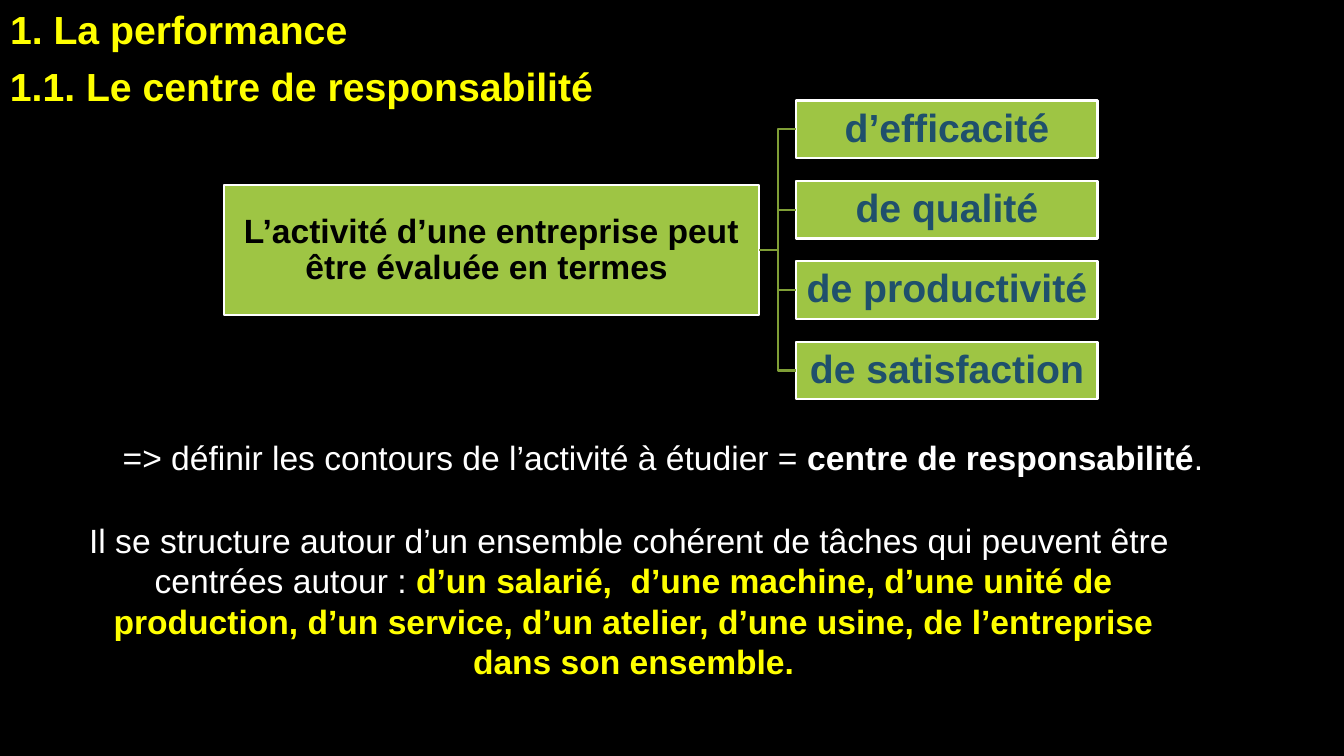
"""Build the slide on performance and the responsibility centre."""
from lxml import etree
from pptx import Presentation
from pptx.dml.color import RGBColor
from pptx.enum import shapes, text
from pptx.oxml import ns
from pptx.util import Pt

COLORS = {
    "background": "000000",
    "heading": "FFFF00",
    "body": "FFFFFF",
    "box": "9EC544",
    "border": "FFFFFF",
    "link": "7F9E36",
    "root": "000000",
    "criterion": "1F506C",
}


def color(name):
    return RGBColor.from_string(COLORS[name])


def write(shape, spans, size=24, align=text.PP_ALIGN.LEFT, anchor=text.MSO_ANCHOR.TOP,
          before=0, after=0, spacing=1.0, inset=None, wrap=True):
    """Fill a shape with one paragraph of (text, colour, bold) spans."""
    frame = shape.text_frame
    frame.auto_size = text.MSO_AUTO_SIZE.NONE
    frame.word_wrap = wrap
    frame.vertical_anchor = anchor
    if inset is not None:
        frame.margin_left = frame.margin_right = Pt(inset)
        frame.margin_top = frame.margin_bottom = Pt(inset)
    para = frame.paragraphs[0]
    para.alignment = align
    para.space_before, para.space_after = Pt(before), Pt(after)
    para.line_spacing = spacing
    for words, name, bold in spans:
        span = para.add_run()
        span.text = words
        span.font.name = "Arial"
        span.font.size = Pt(size)
        span.font.bold = bold
        span.font.color.rgb = color(name)


deck = Presentation()
deck.slide_width, deck.slide_height = Pt(960), Pt(540)
page = deck.slides.add_slide(deck.slide_layouts[5])
page.background.fill.solid()
page.background.fill.fore_color.rgb = color("background")

title = page.shapes.title
title.left, title.top, title.width, title.height = Pt(0), Pt(0), Pt(787.7), Pt(41.2)
write(title, [("1. La performance", "heading", True)], size=28, before=3, after=3)

subtitle = page.shapes.add_textbox(Pt(0), Pt(41.2), Pt(435.6), Pt(41.2))
write(subtitle, [("1.1. Le centre de responsabilité", "heading", True)],
      size=28, before=6, wrap=False)

definition = page.shapes.add_textbox(Pt(80.6), Pt(308.2), Pt(842.4), Pt(36))
write(definition, [
    ("=> définir les contours de l’activité à étudier = ", "body", False),
    ("centre de responsabilité", "body", True),
    (". ", "body", False),
], align=text.PP_ALIGN.JUSTIFY, before=18)

criteria = ["d’efficacité", "de qualité", "de productivité", "de satisfaction"]
nodes = [("L’activité d’une entreprise peut être évaluée en termes ", "root", 24,
          159.8, 132.4, 382.4, 92.8)]
for row, criterion in enumerate(criteria):
    nodes.append((criterion, "criterion", 28, 568.8, 71.8 + 57.4 * row, 215.2, 41.2))

boxes = []
for words, name, size, left, top, width, height in nodes:
    box = page.shapes.add_shape(shapes.MSO_SHAPE.RECTANGLE,
                                Pt(left), Pt(top), Pt(width), Pt(height))
    box.shadow.inherit = False
    box.fill.solid()
    box.fill.fore_color.rgb = color("box")
    box.line.color.rgb = color("border")
    box.line.width = Pt(1.5)
    write(box, [(words, name, True)], size=size, align=text.PP_ALIGN.CENTER,
          anchor=text.MSO_ANCHOR.MIDDLE, spacing=0.9, inset=1.4)
    boxes.append(box)

root, *leaves = boxes
for leaf in leaves:
    link = page.shapes.add_connector(shapes.MSO_CONNECTOR.ELBOW, 0, 0, 0, 0)
    link.begin_connect(root, 3)
    link.end_connect(leaf, 1)
    link.line.color.rgb = color("link")
    link.line.width = Pt(1.5)
    etree.SubElement(link.element.spPr, ns.qn("a:effectLst"))

scope = page.shapes.add_textbox(Pt(45.4), Pt(367.9), Pt(814.3), Pt(123.8))
write(scope, [
    ("Il se structure autour d’un ensemble cohérent de tâches qui peuvent être  "
     "centrées autour : ", "body", False),
    ("d’un salarié,  d’une machine, d’une unité de production, d’un service, "
     "d’un atelier, d’une usine, de l’entreprise dans son ensemble.", "heading", True),
], align=text.PP_ALIGN.CENTER, before=18)

deck.save("out.pptx")
